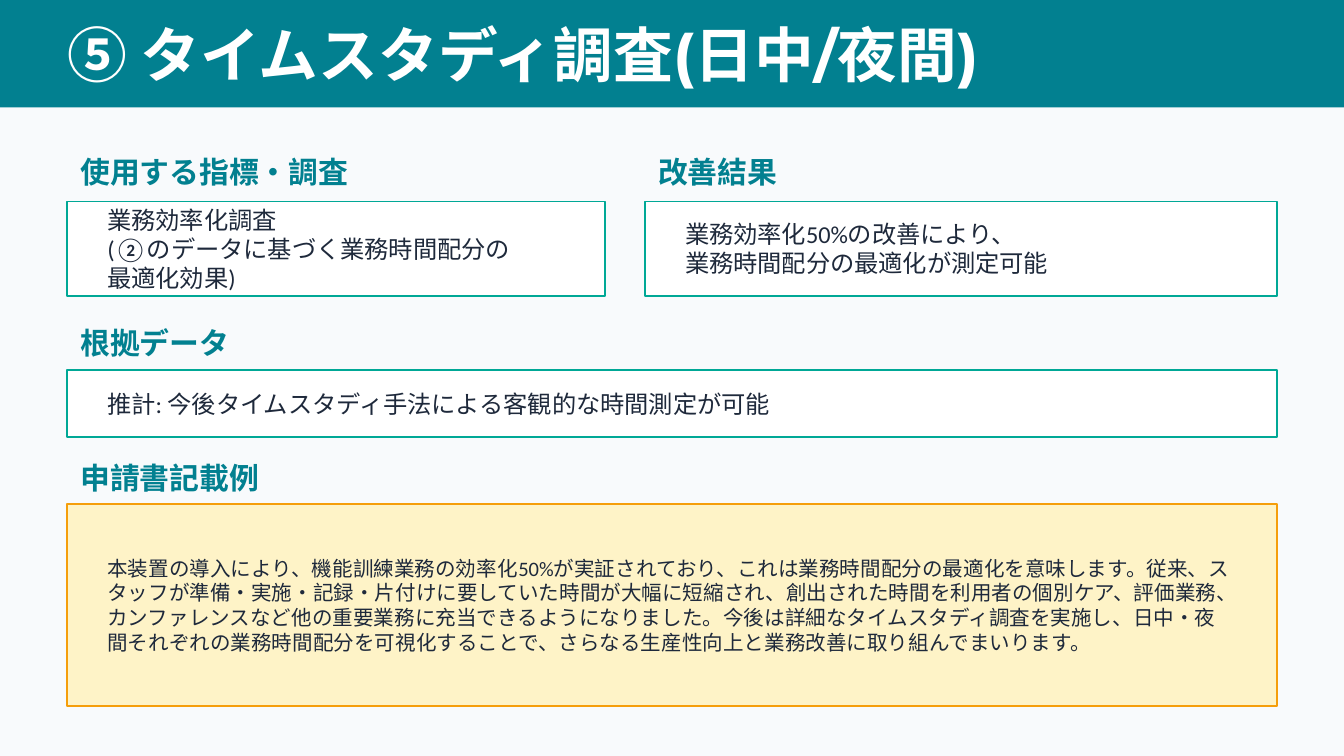
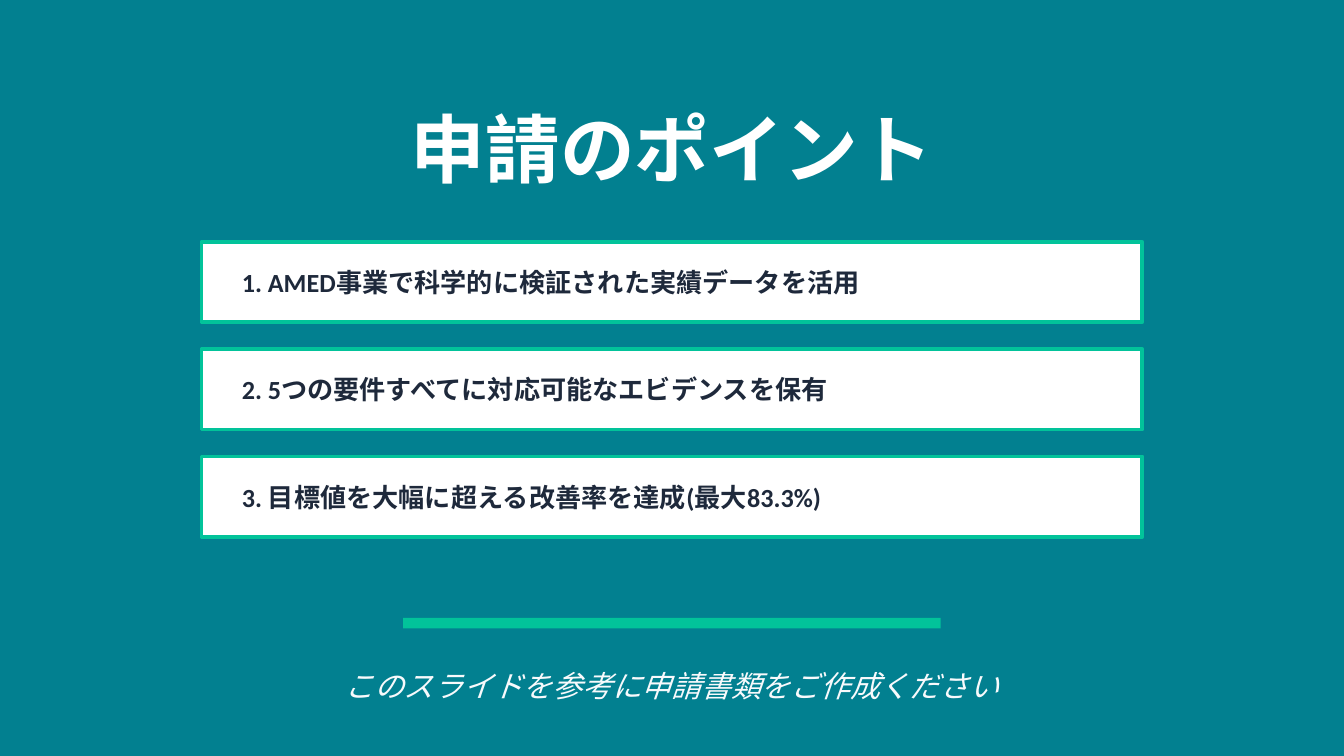
"""Build two slides on the time study survey and the key points of an application."""
from pptx import Presentation
from pptx.dml.color import RGBColor
from pptx.enum.shapes import MSO_SHAPE
from pptx.enum.text import MSO_ANCHOR, MSO_AUTO_SIZE, PP_ALIGN
from pptx.util import Cm, Pt

TEAL = RGBColor(0x02, 0x80, 0x90)
GREEN = RGBColor(0x00, 0xA8, 0x96)
MINT = RGBColor(0x02, 0xC3, 0x9A)
AMBER = RGBColor(0xF5, 0x9E, 0x0B)
CREAM = RGBColor(0xFE, 0xF3, 0xC7)
PALE = RGBColor(0xF8, 0xFA, 0xFC)
INK = RGBColor(0x1E, 0x29, 0x3B)
WHITE = RGBColor(0xFF, 0xFF, 0xFF)
HEAD, BODY = "Montserrat", "Calibri"
EDGE, WIDE = 1.27, 22.86
INSET = 0.51


def write(slide, text, area, size, color, face=BODY, bold=False, italic=False,
          align=PP_ALIGN.LEFT, title=False):
    """Write text in the title placeholder or a new text box."""
    if title:
        box = slide.shapes.title
        box.left, box.top, box.width, box.height = map(Cm, area)
    else:
        box = slide.shapes.add_textbox(*map(Cm, area))
    frame = box.text_frame
    frame.text = text
    frame.word_wrap = True
    frame.auto_size = MSO_AUTO_SIZE.NONE
    frame.vertical_anchor = MSO_ANCHOR.MIDDLE
    for para in frame.paragraphs:
        para.alignment = align
        font = para.font
        font.name, font.size, font.bold, font.italic = face, Pt(size), bold, italic
        font.color.rgb = color
    return frame


def panel(slide, area, fill, line=None, weight=1):
    """Draw a flat rectangle, with an outline if a line colour is given."""
    rect = slide.shapes.add_shape(MSO_SHAPE.RECTANGLE, *map(Cm, area))
    rect.shadow.inherit = False
    rect.fill.solid()
    rect.fill.fore_color.rgb = fill
    if line is None:
        rect.line.fill.background()
    else:
        rect.line.color.rgb = line
        rect.line.width = Pt(weight)
    return rect


deck = Presentation()
deck.slide_width, deck.slide_height = Cm(25.4), Cm(14.29)
study, points = [deck.slides.add_slide(deck.slide_layouts[5]) for _ in range(2)]
for slide, color in ((study, PALE), (points, TEAL)):
    slide.background.fill.solid()
    slide.background.fill.fore_color.rgb = color

band = panel(study, (0, 0, 25.4, 2.03), TEAL)
study.shapes.title.element.addprevious(band.element)
frame = write(study, "⑤ タイムスタディ調査(日中/夜間)", (EDGE, 0.38, WIDE, 1.27),
              32, WHITE, HEAD, bold=True, title=True)
frame.margin_left = frame.margin_right = frame.margin_top = frame.margin_bottom = 0

example = (
    "本装置の導入により、機能訓練業務の効率化50%が実証されており、これは業務時間配分の最適化を意味します。"
    "従来、スタッフが準備・実施・記録・片付けに要していた時間が大幅に短縮され、"
    "創出された時間を利用者の個別ケア、評価業務、カンファレンスなど他の重要業務に充当できるようになりました。"
    "今後は詳細なタイムスタディ調査を実施し、日中・夜間それぞれの業務時間配分を可視化することで、"
    "さらなる生産性向上と業務改善に取り組んでまいります。"
)
parts = [
    ("使用する指標・調査", "業務効率化調査\n(②のデータに基づく業務時間配分の\n最適化効果)",
     EDGE, 10.16, 2.79, 0.89, 3.81, 1.78, 0.13, 13, WHITE, GREEN),
    ("改善結果", "業務効率化50%の改善により、\n業務時間配分の最適化が測定可能",
     12.19, 11.94, 2.79, 0.89, 3.81, 1.78, 0.24, 13, WHITE, GREEN),
    ("根拠データ", "推計: 今後タイムスタディ手法による客観的な時間測定が可能",
     EDGE, WIDE, 6.1, 0.76, 6.99, 1.27, 0.25, 13, WHITE, GREEN),
    ("申請書記載例", example,
     EDGE, WIDE, 8.64, 0.76, 9.53, 3.81, 0.25, 11, CREAM, AMBER),
]
for label, text, left, width, y, tall, top, height, pad, size, fill, line in parts:
    write(study, label, (left, y, width, tall), 16, TEAL, bold=True)
    panel(study, (left, top, width, height), fill, line)
    write(study, text, (left + INSET, top + pad, width - 2 * INSET, height - 2 * pad),
          size, INK)

write(points, "申請のポイント", (EDGE, 2.03, WIDE, 1.52), 40, WHITE, HEAD,
      bold=True, align=PP_ALIGN.CENTER, title=True)
facts = [
    "AMED事業で科学的に検証された実績データを活用",
    "5つの要件すべてに対応可能なエビデンスを保有",
    "目標値を大幅に超える改善率を達成(最大83.3%)",
]
for num, fact in enumerate(facts):
    top = 4.57 + 2.03 * num
    panel(points, (3.81, top, 17.78, 1.52), WHITE, MINT, 2)
    write(points, f"{num + 1}. {fact}", (3.81 + INSET, top + 0.25, 17.78 - 2 * INSET, 1.02),
          14, INK, bold=True)
panel(points, (7.62, 11.68, 10.16, 0.2), MINT)
write(points, "このスライドを参考に申請書類をご作成ください", (EDGE, 12.45, WIDE, 1.02),
      16, PALE, italic=True, align=PP_ALIGN.CENTER)

deck.save("out.pptx")
